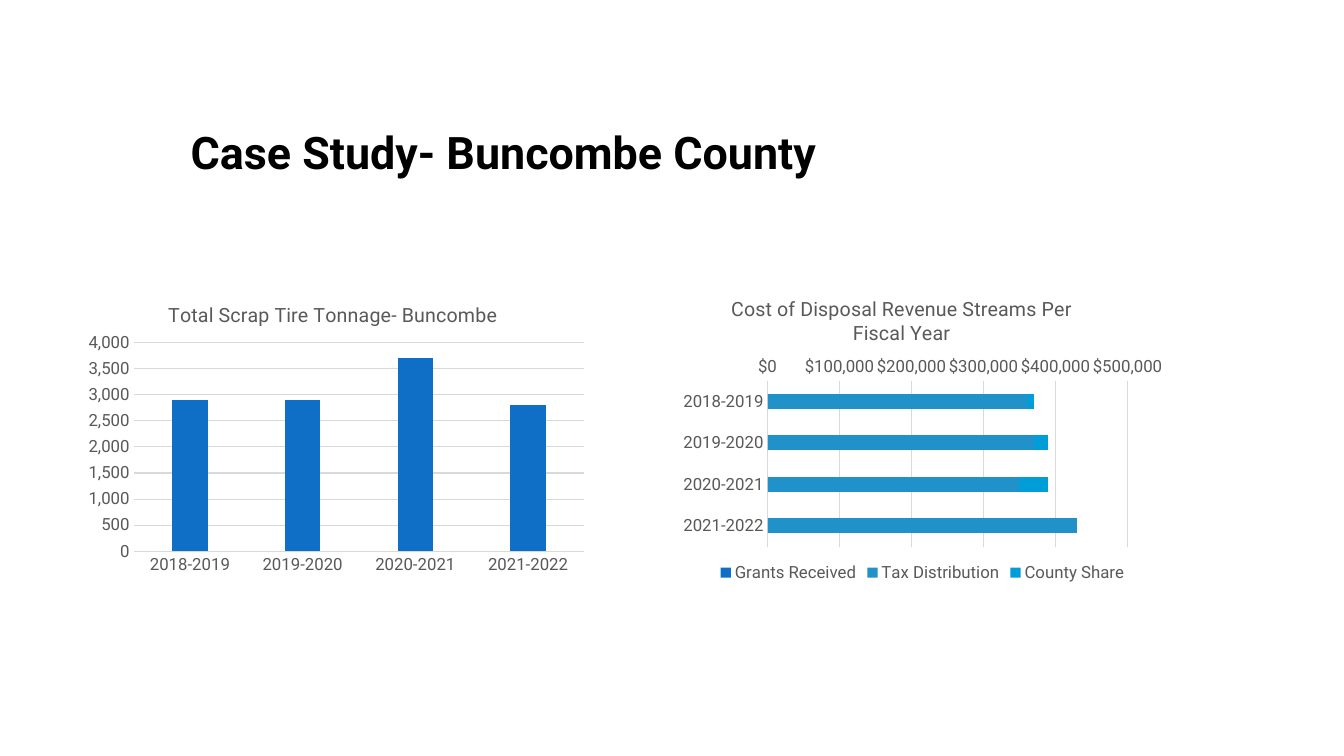
from lxml import etree
from pptx import Presentation
from pptx.chart.data import CategoryChartData
from pptx.dml.color import RGBColor
from pptx.enum.chart import XL_CHART_TYPE, XL_LEGEND_POSITION, XL_TICK_MARK
from pptx.enum.text import MSO_ANCHOR, PP_ALIGN
from pptx.oxml.ns import qn
from pptx.util import Inches, Pt

COLUMN = XL_CHART_TYPE.COLUMN_CLUSTERED
BAR_STACKED = XL_CHART_TYPE.BAR_STACKED
BOTTOM = XL_LEGEND_POSITION.BOTTOM
NO_TICK = XL_TICK_MARK.NONE
MIDDLE = MSO_ANCHOR.MIDDLE
LEFT = PP_ALIGN.LEFT

COLORS = {"ink": "000000", "label": "595959", "grid": "D9D9D9",
          "blue": "0F6FC6", "mid": "2191C9", "cyan": "009DD9"}
YEARS = ["2018-2019", "2019-2020", "2020-2021", "2021-2022"]


def set_layout(parent, index, **fractions):
    """Place a chart part by fractions of the chart's size."""
    for old in parent.findall(qn("c:layout")):
        parent.remove(old)
    layout = etree.Element(qn("c:layout"))
    manual = etree.SubElement(layout, qn("c:manualLayout"))
    values = {"xMode": "edge", "yMode": "edge", **fractions}
    if "w" in fractions:
        values = {"layoutTarget": "inner", **values}
    for name, value in values.items():
        etree.SubElement(manual, qn(f"c:{name}")).set("val", str(value))
    parent.insert(index, layout)


class Deck:
    font = "Roboto"

    def __init__(self, prs):
        self.s = prs.slides.add_slide(prs.slide_layouts[5])

    def color(self, name):
        return RGBColor.from_string(COLORS[name])

    def style(self, font, size, color="label", bold=False):
        for key, value in {"name": self.font, "size": Pt(size), "bold": bold}.items():
            setattr(font, key, value)
        font.color.rgb = self.color(color)

    def grid_line(self, line):
        line.color.rgb = self.color("grid")
        line.width = Pt(0.75)

    def title(self, text, box):
        sp = self.s.shapes.title
        for key, value in zip(("left", "top", "width", "height"), box):
            setattr(sp, key, Inches(value))
        tf = sp.text_frame
        tf.text = text
        tf.vertical_anchor = MIDDLE
        p = tf.paragraphs[0]
        p.alignment = LEFT
        self.style(p.runs[0].font, 32, "ink", True)

    def chart(self, kind, title, box, series, number_format, title_at, plot, **plot_format):
        """Series are (name, values, color); title_at and plot are fractions."""
        data = CategoryChartData(number_format=number_format)
        data.categories = YEARS
        for name, values, _ in series:
            data.add_series(name, values)
        chart = self.s.shapes.add_chart(kind, *map(Inches, box), data).chart
        self.style(chart.font, 12)
        self.chart_title(chart, title, title_at)
        self.axes(chart, number_format)
        for key, value in plot_format.items():
            setattr(chart.plots[0], key, value)
        chart.plots[0].vary_by_categories = False
        for ser, (_, _, color) in zip(chart.plots[0].series, series):
            ser.invert_if_negative = False
            ser.format.fill.solid()
            ser.format.fill.fore_color.rgb = self.color(color)
        area = chart.value_axis._element.getparent()
        set_layout(area, 0, **dict(zip("xywh", plot)))
        chart.has_legend = False
        return chart

    def chart_title(self, chart, text, at):
        chart.has_title = True
        p = chart.chart_title.text_frame.paragraphs[0]
        r = p.add_run()
        r.text = text
        self.style(r.font, 14)
        set_layout(chart.chart_title._element, 1, x=at[0], y=at[1])

    def axes(self, chart, number_format):
        val, cat = chart.value_axis, chart.category_axis
        for axis in (val, cat):
            axis.major_tick_mark = axis.minor_tick_mark = NO_TICK
            self.style(axis.tick_labels.font, 12)
        self.grid_line(cat.format.line)
        self.grid_line(val.major_gridlines.format.line)
        val.format.line.fill.background()
        val.tick_labels.number_format = number_format
        val.tick_labels.number_format_is_linked = False

    def legend(self, chart):
        chart.has_legend = True
        chart.legend.position = BOTTOM
        chart.legend.include_in_layout = False
        self.style(chart.legend.font, 12)


def main():
    prs = Presentation()
    prs.slide_width, prs.slide_height = Inches(13.33), Inches(7.5)
    deck = Deck(prs)
    deck.title("Case Study- Buncombe County", (1.79, 0.75, 9.75, 1.5))

    revenue = deck.chart(
        BAR_STACKED, "Cost of Disposal Revenue Streams Per Fiscal Year",
        (6.67, 2.77, 4.96, 3.05),
        [("Grants Received", (0, 0, 0, 0), "blue"),
         ("Tax Distribution", (360000, 370000, 350000, 430000), "mid"),
         ("County Share", (10000, 20000, 40000, -10000), "cyan")],
        '"$"#,##0', (0.11, 0.04), (0.19, 0.33, 0.72, 0.54),
        gap_width=182, overlap=100)
    revenue.category_axis.reverse_order = True
    revenue.value_axis.minimum_scale = 0
    deck.legend(revenue)

    deck.chart(
        COLUMN, "Total Scrap Tire Tonnage- Buncombe", (0.76, 2.77, 5.14, 3),
        [("Series 1", (2900, 2900, 3700, 2800), "blue")],
        "#,##0", (0.17, 0.06), (0.11, 0.21, 0.87, 0.69),
        gap_width=219, overlap=-27)
    prs.save("out.pptx")


if __name__ == "__main__":
    main()
